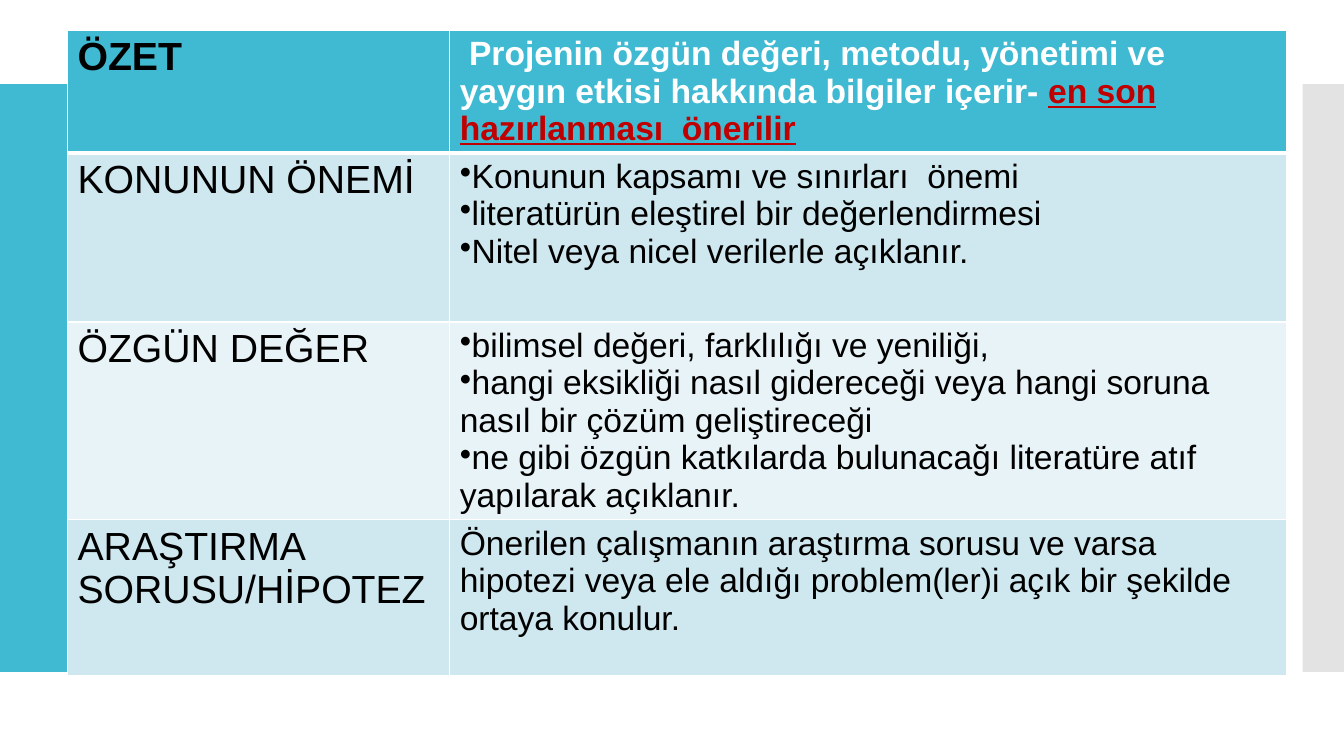
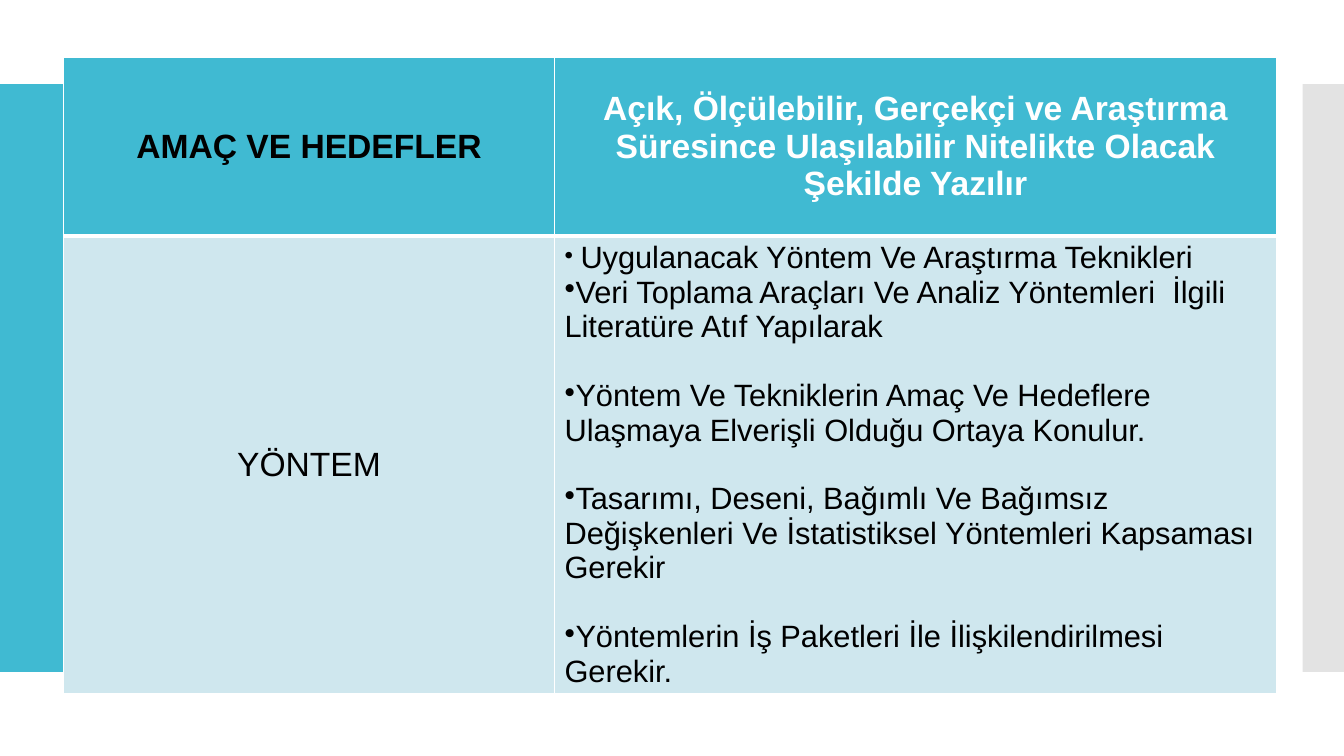
"""Builds two slides of project proposal tables between side bands."""
from dataclasses import dataclass

from lxml.etree import SubElement
from pptx import Presentation
from pptx.dml.color import RGBColor as RGB
from pptx.enum.shapes import MSO_SHAPE as SHAPE
from pptx.enum.text import MSO_ANCHOR as ANCHOR, PP_ALIGN as ALIGN
from pptx.oxml.ns import qn
from pptx.util import Inches, Pt


@dataclass(frozen=True)
class Theme:
    font: str = "Arial"
    accent: str = "40BAD2"
    side: str = "C8C8C8"
    side_alpha: int = 50
    stripes: tuple = ("CFE7EE", "E8F3F7")
    white: str = "FFFFFF"
    dark: str = "000000"
    alert: str = "C00000"
    large: int = 28
    medium: int = 24
    body: int = 22
    small: int = 18
    thin: int = 1
    thick: int = 3


T = Theme()
W, H = 13.33, 7.5
BAND_TOP, BAND_H = H / 9, H * 7 / 9
BANDS = [(0, 3.77, T.accent, 100), (12.92, W - 12.92, T.side, T.side_alpha)]

SLIDES = [
    dict(
        at=(0.67, 0.3), cols=(3.79, 8.3), heights=(1.19, 1.68, 1.96, 1.55),
        label=dict(size=T.large), text=dict(size=T.medium),
        rows=[
            ("ÖZET", [[
                " Projenin özgün değeri, metodu, yönetimi ve yaygın etkisi hakkında bilgiler içerir- ",
                ("en son hazırlanması  önerilir", dict(color=T.alert, underline=True)),
            ]], {}),
            ("KONUNUN ÖNEMİ", [
                "Konunun kapsamı ve sınırları  önemi",
                "literatürün eleştirel bir değerlendirmesi",
                "Nitel veya nicel verilerle açıklanır.",
            ], dict(bullet=True)),
            ("ÖZGÜN DEĞER", [
                "bilimsel değeri, farklılığı ve yeniliği,",
                "hangi eksikliği nasıl gidereceği veya hangi soruna nasıl bir çözüm geliştireceği",
                "ne gibi özgün katkılarda bulunacağı literatüre atıf yapılarak açıklanır.",
            ], dict(bullet=True)),
            ("ARAŞTIRMA SORUSU/HİPOTEZ", [
                "Önerilen çalışmanın araştırma sorusu ve varsa hipotezi veya ele aldığı "
                "problem(ler)i açık bir şekilde ortaya konulur.",
            ], {}),
        ],
    ),
    dict(
        at=(0.63, 0.57), cols=(4.87, 7.16), heights=(1.77, 4.53),
        label=dict(size=T.medium, align=ALIGN.CENTER, anchor=ANCHOR.MIDDLE),
        text=dict(size=T.body, anchor=ANCHOR.MIDDLE),
        rows=[
            ("AMAÇ VE HEDEFLER", [
                "Açık, Ölçülebilir, Gerçekçi ve Araştırma Süresince Ulaşılabilir "
                "Nitelikte Olacak Şekilde Yazılır",
            ], dict(size=T.medium, align=ALIGN.CENTER)),
            ("YÖNTEM", [
                [(" ", dict(size=T.small)), "Uygulanacak Yöntem Ve Araştırma Teknikleri"],
                "Veri Toplama Araçları Ve Analiz Yöntemleri  İlgili Literatüre Atıf Yapılarak",
                "Yöntem Ve Tekniklerin Amaç Ve Hedeflere Ulaşmaya Elverişli Olduğu Ortaya Konulur.",
                "Tasarımı, Deseni, Bağımlı Ve Bağımsız Değişkenleri Ve İstatistiksel "
                "Yöntemleri Kapsaması Gerekir",
                "Yöntemlerin İş Paketleri İle İlişkilendirilmesi Gerekir.",
            ], dict(bullet=True, gap=24.6, gap_from=2)),
        ],
    ),
]


def add_run(p, text, size, color, bold=False, underline=False):
    """Add one formatted run."""
    r = p.add_run()
    r.text = text
    f = r.font
    f.name, f.size, f.bold, f.underline = T.font, Pt(size), bold, underline
    f.color.rgb = RGB.from_string(color)


def write(cell, paragraphs, align=ALIGN.LEFT, anchor=ANCHOR.TOP, bullet=False,
          gap=0, gap_from=0, **font):
    """Fill a cell with paragraphs of plain or individually formatted runs."""
    cell.vertical_anchor = anchor
    tf = cell.text_frame
    for i, runs in enumerate(paragraphs):
        p = tf.add_paragraph() if i else tf.paragraphs[0]
        p.alignment = align
        if gap and i >= gap_from:
            p.space_before = Pt(gap)
        if bullet:
            SubElement(p._p.get_or_add_pPr(), qn("a:buChar"), char="•")
        for run in [runs] if isinstance(runs, str) else runs:
            text, own = (run, {}) if isinstance(run, str) else run
            add_run(p, text, **{**font, **own})


def paint(cell, fill, top, bottom):
    """Give a cell white borders and a solid fill."""
    tcPr = cell._tc.get_or_add_tcPr()
    for side, width in zip("LRTB", (T.thin, T.thin, top, bottom)):
        ln = SubElement(tcPr, qn(f"a:ln{side}"), w=str(Pt(width)))
        SubElement(SubElement(ln, qn("a:solidFill")), qn("a:srgbClr"), val=T.white)
    cell.fill.solid()
    cell.fill.fore_color.rgb = RGB.from_string(fill)


def add_bands(slide):
    """Draw the bands at both slide edges."""
    for left, width, color, alpha in BANDS:
        sp = slide.shapes.add_shape(SHAPE.RECTANGLE, Inches(left), Inches(BAND_TOP),
                                    Inches(width), Inches(BAND_H))
        sp.shadow.inherit = False
        sp.line.fill.background()
        sp.fill.solid()
        sp.fill.fore_color.rgb = RGB.from_string(color)
        if alpha < 100:
            clr = sp._element.spPr.find(qn("a:solidFill"))[0]
            SubElement(clr, qn("a:alpha"), val=str(alpha * 1000))


def add_grid(slide, at, cols, heights, label, text, rows):
    """Draw a table with a header row and striped rows below it."""
    box = (*at, sum(cols), sum(heights))
    table = slide.shapes.add_table(len(rows), len(cols), *map(Inches, box)).table
    for col, width in zip(table.columns, cols):
        col.width = Inches(width)
    for i, (name, paragraphs, own) in enumerate(rows):
        table.rows[i].height = Inches(heights[i])
        head = i == 0
        fill = T.accent if head else T.stripes[(i - 1) % 2]
        left, right = table.rows[i].cells
        for cell in (left, right):
            paint(cell, fill, T.thick if i == 1 else T.thin, T.thick if head else T.thin)
        write(left, [name], color=T.dark, bold=head, **label)
        write(right, paragraphs, color=T.white if head else T.dark, bold=head,
              **{**text, **own})


def main():
    """Build and save the presentation."""
    prs = Presentation()
    prs.slide_width, prs.slide_height = Inches(W), Inches(H)
    for content in SLIDES:
        slide = prs.slides.add_slide(prs.slide_layouts[6])
        add_bands(slide)
        add_grid(slide, **content)
    prs.save("out.pptx")


if __name__ == "__main__":
    main()
